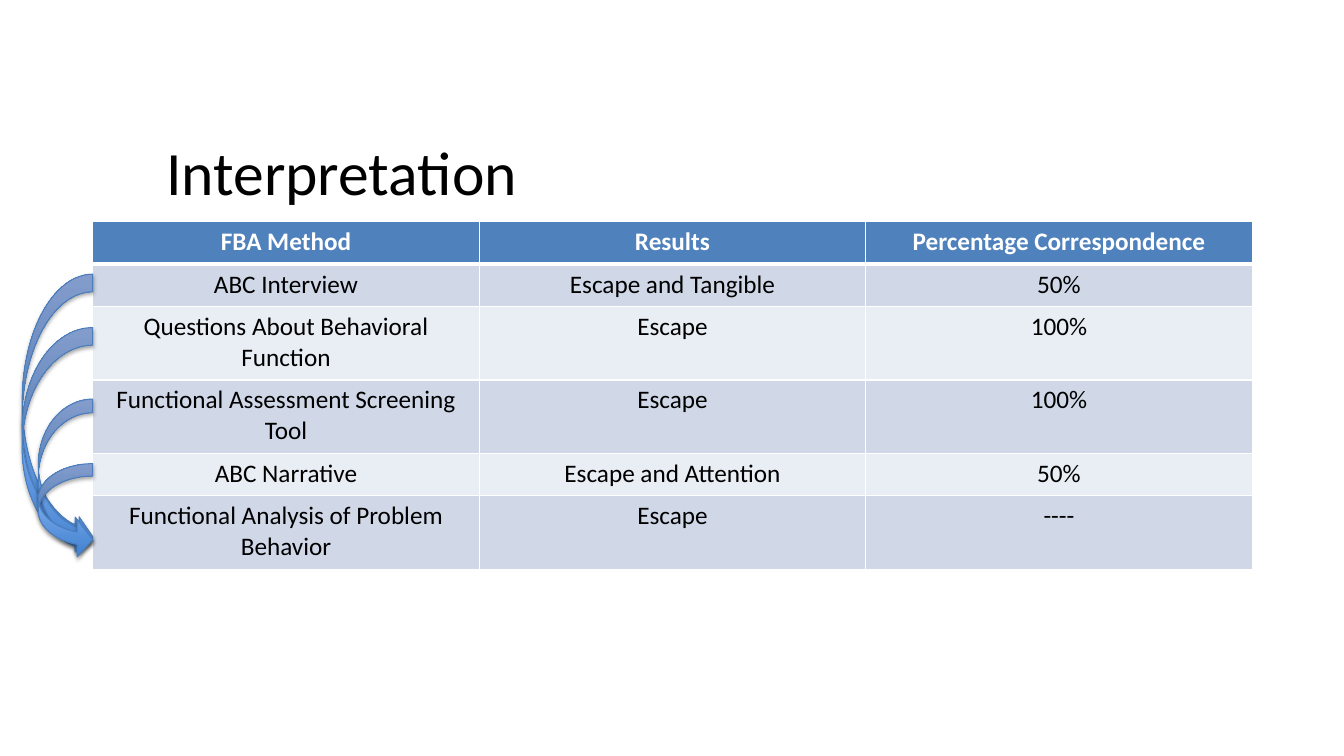
from lxml import etree
from pptx import Presentation
from pptx.dml.color import RGBColor
from pptx.enum.shapes import MSO_SHAPE
from pptx.enum.text import MSO_ANCHOR, PP_ALIGN
from pptx.oxml.ns import qn
from pptx.util import Inches, Pt

CURVED_ARROW = MSO_SHAPE.CURVED_RIGHT_ARROW
CENTER = PP_ALIGN.CENTER
TOP = MSO_ANCHOR.TOP

FONT = "Calibri"
BLACK = RGBColor(0x00, 0x00, 0x00)
WHITE = RGBColor(0xFF, 0xFF, 0xFF)
HEADER_BLUE = RGBColor(0x4F, 0x81, 0xBD)
BAND_DARK = RGBColor(0xD0, 0xD8, 0xE8)
BAND_LIGHT = RGBColor(0xE9, 0xED, 0xF4)
ARROW_DARK = RGBColor(0x3F, 0x80, 0xCE)
ARROW_LIGHT = RGBColor(0xA4, 0xC4, 0xFF)
ARROW_LINE = RGBColor(0x4B, 0x7E, 0xBC)

ROWS = [
    ("FBA Method", "Results", "Percentage Correspondence"),
    ("ABC Interview", "Escape and Tangible", "50%"),
    ("Questions About Behavioral Function", "Escape", "100%"),
    ("Functional Assessment Screening Tool", "Escape", "100%"),
    ("ABC Narrative", "Escape and Attention", "50%"),
    ("Functional Analysis of Problem Behavior", "Escape", "----"),
]
ROW_HEIGHTS = [0.42, 0.42, 0.73, 0.73, 0.42, 0.73]
TABLE_LEFT, TABLE_TOP, TABLE_WIDTH = 0.92, 2.2, 11.5

# Top, width, height and adjustments of each arrow
ARROWS = [
    (2.72, 0.7, 2.78, (0.25, 0.471, 0.25)),
    (3.25, 0.7, 2.26, (0.25, 0.413, 0.25)),
    (3.96, 0.54, 1.54, (0.25, 0.65, 0.25)),
    (4.6, 0.54, 0.94, (0.227, 0.688, 0.287)),
]


def format_paragraph(p, size, color, bold=False):
    p.alignment = CENTER
    for r in p.runs:
        r.font.name = FONT
        r.font.size = Pt(size)
        r.font.bold = bold
        r.font.color.rgb = color


def add_color(parent, color):
    return etree.SubElement(parent, qn("a:srgbClr"), val=str(color))


def add_title(slide, text):
    title = slide.shapes.title
    title.left, title.top = Inches(-2.36), Inches(1.28)
    title.width, title.height = Inches(11.5), Inches(1.45)
    tf = title.text_frame
    tf.text = text
    tf.vertical_anchor = TOP
    format_paragraph(tf.paragraphs[0], 44, BLACK)


def set_borders(cell, top, bottom):
    tc_pr = cell._tc.get_or_add_tcPr()
    for side, width in (("L", 1), ("R", 1), ("T", top), ("B", bottom)):
        ln = etree.SubElement(tc_pr, qn(f"a:ln{side}"), w=str(Pt(width)))
        add_color(etree.SubElement(ln, qn("a:solidFill")), WHITE)


def add_table(slide):
    table = slide.shapes.add_table(
        len(ROWS), len(ROWS[0]), Inches(TABLE_LEFT), Inches(TABLE_TOP),
        Inches(TABLE_WIDTH), Inches(sum(ROW_HEIGHTS))).table
    for i, (texts, height) in enumerate(zip(ROWS, ROW_HEIGHTS)):
        table.rows[i].height = Inches(height)
        header = i == 0
        band = BAND_DARK if i % 2 else BAND_LIGHT
        for j, text in enumerate(texts):
            cell = table.cell(i, j)
            cell.text = text
            format_paragraph(cell.text_frame.paragraphs[0], 18,
                             WHITE if header else BLACK, header)
            # The rule under the header is thicker
            set_borders(cell, 3 if i == 1 else 1, 3 if header else 1)
            cell.fill.solid()
            cell.fill.fore_color.rgb = HEADER_BLUE if header else band


def add_shadow(sp):
    sp.shadow.inherit = False
    effects = sp._element.spPr.find(qn("a:effectLst"))
    shadow = etree.SubElement(
        effects, qn("a:outerShdw"), blurRad=str(Pt(3.1)), dist=str(Pt(1.8)),
        dir="5400000", rotWithShape="0")
    etree.SubElement(add_color(shadow, BLACK), qn("a:alpha"), val="35000")


def add_arrow(slide, top, width, height, adjustments):
    # Every arrow ends at the left edge of the table
    sp = slide.shapes.add_shape(
        CURVED_ARROW, Inches(TABLE_LEFT - width), Inches(top),
        Inches(width), Inches(height))
    for i, value in enumerate(adjustments):
        sp.adjustments[i] = value
    sp.fill.gradient()
    sp.fill.gradient_angle = 90
    for stop, color in zip(sp.fill.gradient_stops, (ARROW_DARK, ARROW_LIGHT)):
        stop.color.rgb = color
    sp.line.color.rgb = ARROW_LINE
    sp.line.width = Pt(0.75)
    add_shadow(sp)


def main():
    prs = Presentation()
    prs.slide_width, prs.slide_height = Inches(13.33), Inches(7.5)
    slide = prs.slides.add_slide(prs.slide_layouts[5])

    add_title(slide, "Interpretation")
    add_table(slide)
    for arrow in ARROWS:
        add_arrow(slide, *arrow)

    prs.save("out.pptx")


if __name__ == "__main__":
    main()
